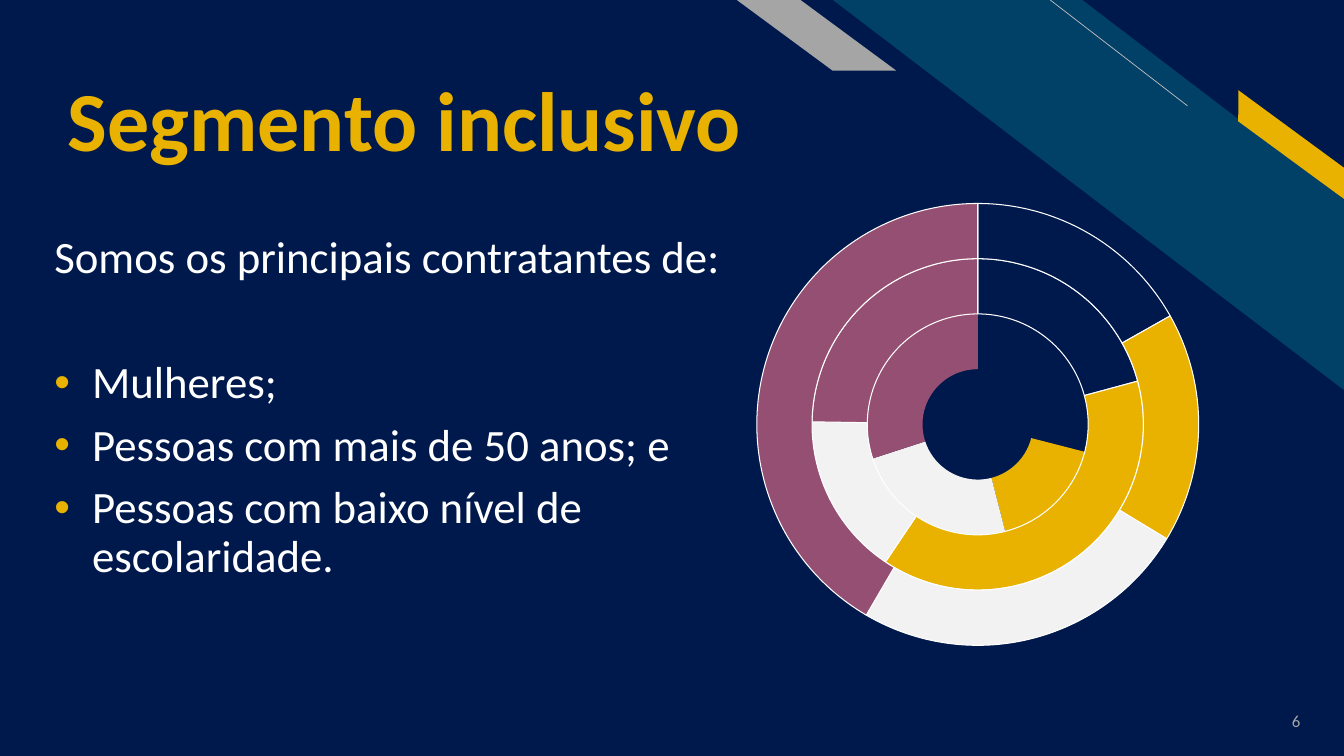
import pptx
import pptx.chart.data
import pptx.dml.color
import pptx.enum.chart
import pptx.enum.shapes
import pptx.enum.text
import pptx.oxml
import pptx.oxml.ns
import pptx.util

Pt = pptx.util.Pt
SHAPE = pptx.enum.shapes.MSO_SHAPE
ANCHOR = pptx.enum.text.MSO_ANCHOR
ALIGN = pptx.enum.text.PP_ALIGN

NAVY, TEAL, GOLD, GREY = "00194C", "014067", "EAB200", "A5A5A5"
WHITE, PALE, PLUM = "FFFFFF", "F2F2F2", "954F72"


def rgb(hex_code):
    return pptx.dml.color.RGBColor.from_string(hex_code)


def place(sp, box):
    sp.left, sp.top, sp.width, sp.height = (Pt(v) for v in box)


def add_run(p, text, size, color, bold=False):
    r = p.add_run()
    r.text = text
    r.font.name = "Calibri"
    r.font.size = Pt(size)
    r.font.bold = bold
    r.font.color.rgb = rgb(color)


def add_band(s, kind, box, color, adj, rotation=0):
    """Mirrored diagonal band without outline."""
    sp = s.shapes.add_shape(kind, *(Pt(v) for v in box))
    sp.shadow.inherit = False
    sp.fill.solid()
    sp.fill.fore_color.rgb = rgb(color)
    sp.line.fill.background()
    sp.adjustments[0] = adj
    sp.rotation = rotation
    sp.element.spPr.get_or_add_xfrm().set("flipH", "1")


def add_corner(s, box):
    """Diagonal bands in the top right corner."""
    x, y, w, h = box
    add_band(s, SHAPE.DIAGONAL_STRIPE, (x + w - 365, y, 365, h), TEAL, 0.512)
    line = s.shapes.add_connector(
        pptx.enum.shapes.MSO_CONNECTOR.STRAIGHT,
        Pt(x + w - 111.8), Pt(y + 75.6), Pt(x + w - 209.8), Pt(y))
    line.line.color.rgb = rgb("BFBFBF")
    line.line.width = Pt(0.5)
    line.element.spPr.append(pptx.oxml.parse_xml(
        "<a:effectLst %s/>" % pptx.oxml.ns.nsdecls("a")))
    add_band(s, SHAPE.PARALLELOGRAM, (x + w - 91, y + 94.3, 106.6, 18),
             GOLD, 0.72, 36.3)
    add_band(s, SHAPE.PARALLELOGRAM, (x, y, 113.8, 50.4), GREY, 1.356)


def add_title(s, box, text):
    sp = s.shapes.title
    place(sp, box)
    tf = sp.text_frame
    tf.word_wrap = True
    tf.auto_size = pptx.enum.text.MSO_AUTO_SIZE.NONE
    tf.vertical_anchor = ANCHOR.BOTTOM
    tf.margin_bottom = 0
    p = tf.paragraphs[0]
    p.alignment = ALIGN.LEFT
    p.line_spacing = 0.9
    add_run(p, text, 60, GOLD, bold=True)


def add_bullet(p):
    pPr = p._p.get_or_add_pPr()
    pPr.set("marL", str(Pt(27)))
    pPr.set("indent", str(-Pt(27)))
    ns = pptx.oxml.ns.nsdecls("a")
    for xml in ('<a:buClr %s><a:srgbClr val="' + GOLD + '"/></a:buClr>',
                '<a:buFont %s typeface="Arial"/>',
                '<a:buChar %s char="•"/>'):
        pPr.append(pptx.oxml.parse_xml(xml % ns))


def add_body(s, box, intro, items):
    """Introductory line followed by a bulleted list."""
    tf = s.shapes.add_textbox(*(Pt(v) for v in box)).text_frame
    tf.word_wrap = True
    for i, text in enumerate([intro] + items):
        p = tf.add_paragraph() if i else tf.paragraphs[0]
        p.line_spacing = 0.9
        p.space_before = Pt(55 if i == 1 else 10)
        if i:
            add_bullet(p)
        add_run(p, text, 32, WHITE)


def add_rings(s, box, rings):
    """Doughnut chart with one ring for each series."""
    data = pptx.chart.data.CategoryChartData()
    data.categories = ["1", "2", "3", "4"]
    for i, values in enumerate(rings, 1):
        data.add_series(f"Series {i}", values)
    chart = s.shapes.add_chart(
        pptx.enum.chart.XL_CHART_TYPE.DOUGHNUT,
        *(Pt(v) for v in box), data).chart
    chart.has_title = False
    chart.has_legend = False
    chart.font.name = "Calibri"
    chart.font.size = Pt(10)
    chart.font.color.rgb = rgb("3F3F3F")
    plot = chart.plots[0]
    plot.vary_by_categories = True
    for ring, series in enumerate(plot.series):
        for i, color in enumerate((NAVY, GOLD, PALE, PLUM)):
            fmt = series.points[i].format
            fmt.fill.solid()
            fmt.fill.fore_color.rgb = rgb(color)
            if ring:
                fmt.line.color.rgb = rgb(WHITE)
                fmt.line.width = Pt(0.75)
            else:
                fmt.line.fill.background()


def add_page_number(s, box, number):
    tf = s.shapes.add_textbox(*(Pt(v) for v in box)).text_frame
    tf.word_wrap = True
    tf.vertical_anchor = ANCHOR.MIDDLE
    p = tf.paragraphs[0]
    p.alignment = ALIGN.RIGHT
    add_run(p, number, 12, GREY)


def main():
    prs = pptx.Presentation()
    prs.slide_width, prs.slide_height = Pt(960), Pt(540)
    s = prs.slides.add_slide(prs.slide_layouts.get_by_name("Title Only"))
    s.background.fill.solid()
    s.background.fill.fore_color.rgb = rgb(NAVY)

    add_corner(s, (526.3, 0, 433.7, 278.6))
    add_title(s, (41, 16.6, 667.4, 104.4), "Segmento inclusivo")
    add_body(s, (31.7, 164.2, 498.2, 321.8),
             "Somos os principais contratantes de:",
             ["Mulheres;",
              "Pessoas com mais de 50 anos; e",
              "Pessoas com baixo nível de escolaridade."])
    add_rings(s, (443.5, 135.4, 509.8, 335.5),
              [(29, 17, 24, 30), (21, 39, 16, 25), (17, 17, 25, 42)])
    add_page_number(s, (877.7, 500.4, 58.3, 28.8), "6")
    prs.save("out.pptx")


if __name__ == "__main__":
    main()
